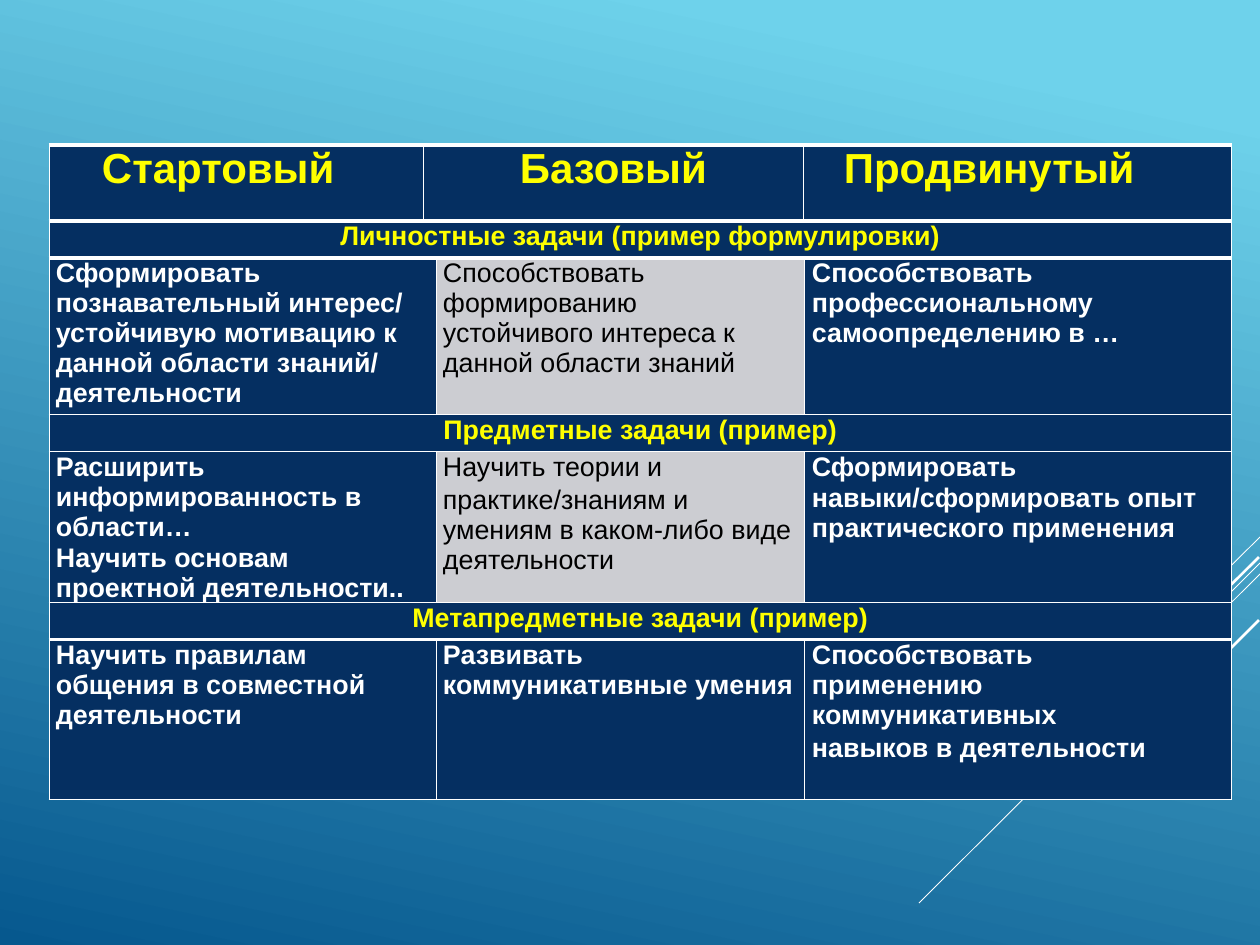
import pptx
import pptx.util
import pptx.dml.color
import pptx.enum.shapes
import pptx.enum.text
import pptx.oxml
import pptx.oxml.ns

COLORS = {
    "sky": "6ED2EB",
    "deep": "06588E",
    "navy": "052F61",
    "gray": "CCCDD2",
    "yellow": "FFFF00",
    "white": "FFFFFF",
    "black": "000000",
}
ALIGN = pptx.enum.text.PP_ALIGN


def px(n):
    return pptx.util.Emu(round(n * 914400 / 84))


def rgb(name):
    return pptx.dml.color.RGBColor.from_string(COLORS[name])


def write(p, text, size=23, color="white", bold=True, align=ALIGN.LEFT, before=0.3):
    p.alignment = align
    p.space_before = pptx.util.Pt(before)
    r = p.add_run()
    r.text = text
    r.font.name = "Arial"
    r.font.size = pptx.util.Pt(size)
    r.font.bold = bold
    r.font.color.rgb = rgb(color)


class Deck:
    def __init__(self, width, height):
        self.prs = pptx.Presentation()
        self.prs.slide_width, self.prs.slide_height = px(width), px(height)
        self.s = self.prs.slides.add_slide(self.prs.slide_layouts[6])

    def background(self, stops, angle):
        fill = self.s.background.fill
        fill.gradient()
        fill.gradient_angle = 360 - angle
        for stop, (position, color) in zip(fill.gradient_stops, stops):
            stop.position = position
            stop.color.rgb = rgb(color)

    def line(self, x1, y1, x2, y2, width):
        straight = pptx.enum.shapes.MSO_CONNECTOR.STRAIGHT
        c = self.s.shapes.add_connector(straight, px(x1), px(y1), px(x2), px(y2))
        c.line.color.rgb = rgb("white")
        c.line.width = pptx.util.Pt(width)
        c._element.spPr.append(pptx.oxml.parse_xml(
            f'<a:effectLst {pptx.oxml.ns.nsdecls("a")}/>'))

    def table(self, x, y, widths, heights):
        frame = self.s.shapes.add_table(len(heights), len(widths), px(x), px(y),
                                        px(sum(widths)), px(sum(heights)))
        tbl = frame.table
        tbl.first_row = tbl.horz_banding = False
        for column, width in zip(tbl.columns, widths):
            column.width = px(width)
        for row, height in zip(tbl.rows, heights):
            row.height = px(height)
        return tbl

    def cell(self, cell, paragraphs, fill="navy", left=0, right=0, top=1, bottom=1,
             **style):
        tcPr = cell._tc.get_or_add_tcPr()
        for side, width in (("L", 1), ("R", 1), ("T", top), ("B", bottom)):
            tcPr.append(pptx.oxml.parse_xml(
                f'<a:ln{side} {pptx.oxml.ns.nsdecls("a")} w="{width * 12700}">'
                f'<a:solidFill><a:srgbClr val="{COLORS["white"]}"/></a:solidFill>'
                f'</a:ln{side}>'))
        cell.fill.solid()
        cell.fill.fore_color.rgb = rgb(fill)
        cell.margin_left, cell.margin_right = px(left), px(right)
        cell.margin_top = cell.margin_bottom = 0
        tf = cell.text_frame
        for i, (text, before) in enumerate(paragraphs):
            p = tf.add_paragraph() if i else tf.paragraphs[0]
            write(p, text, before=before, **style)


LINES = [
    (1260, 537, 1155, 641, 0.75),
    (1260, 563, 919, 903, 0.75),
    (1260, 574, 1043, 790, 0.75),
    (1259, 557, 1060, 755, 2.25),
    (1259, 620, 1115, 764, 2.25),
]
LEVELS = [
    ("Стартовый", 53, ALIGN.LEFT),
    ("Базовый", 0, ALIGN.CENTER),
    ("Продвинутый", 40, ALIGN.LEFT),
]
SECTIONS = [
    ("Личностные задачи (пример формулировки)", [
        [("Сформировать познавательный интерес/ устойчивую мотивацию к "
          "данной области знаний/", 0), ("деятельности", 0)],
        [("Способствовать формированию устойчивого интереса к "
          "данной области знаний", 0)],
        [("Способствовать профессиональному самоопределению в …", 0)],
    ]),
    ("Предметные задачи (пример)", [
        [("Расширить информированность в области…", 0.3),
         ("Научить основам проектной деятельности..", 0.3)],
        [("Научить теории и", 0.3),
         ("практике/знаниям и умениям в каком-либо виде деятельности", 2.6)],
        [("Сформировать", 0.3),
         ("навыки/сформировать опыт практического применения", 0.7)],
    ]),
    ("Метапредметные задачи (пример)", [
        [("Научить правилам общения в совместной деятельности", 0.3)],
        [("Развивать коммуникативные умения", 0.3)],
        [("Способствовать применению", 0.3), ("коммуникативных", 0),
         ("навыков в деятельности", 2.6)],
    ]),
]
THICK_RULE = (0, 2)
GRAY_CELLS = [(0, 1), (1, 1)]
RIGHT_MARGINS = [20, 0, 28]
GRAY_MARGIN = 12


def main():
    deck = Deck(1260, 945)
    deck.background([(0.1, "sky"), (1, "deep")], 102)
    for line in LINES:
        deck.line(*line)

    tasks = deck.table(49, 221, [387, 369, 427], [37, 157, 37, 132, 37, 160])
    for i, (title, texts) in enumerate(SECTIONS):
        rule = 3 if i in THICK_RULE else 1
        top = 3 if i == 0 else 1
        tasks.cell(2 * i, 0).merge(tasks.cell(2 * i, 2))
        for j, paragraphs in enumerate(texts):
            heading = [(title, 0.3)] if j == 0 else []
            deck.cell(tasks.cell(2 * i, j), heading, color="yellow",
                      align=ALIGN.CENTER, top=top, bottom=rule)
            gray = (i, j) in GRAY_CELLS
            deck.cell(tasks.cell(2 * i + 1, j), paragraphs, left=7, top=rule,
                      right=GRAY_MARGIN if gray else RIGHT_MARGINS[j],
                      fill="gray" if gray else "navy",
                      color="black" if gray else "white", bold=not gray)

    header = deck.table(49, 145, [374, 381, 428], [76])
    for j, (level, left, align) in enumerate(LEVELS):
        deck.cell(header.cell(0, j), [(level, 0.3)], left=left, top=3, bottom=3,
                  size=36, color="yellow", align=align)

    deck.prs.save("out.pptx")


if __name__ == "__main__":
    main()
